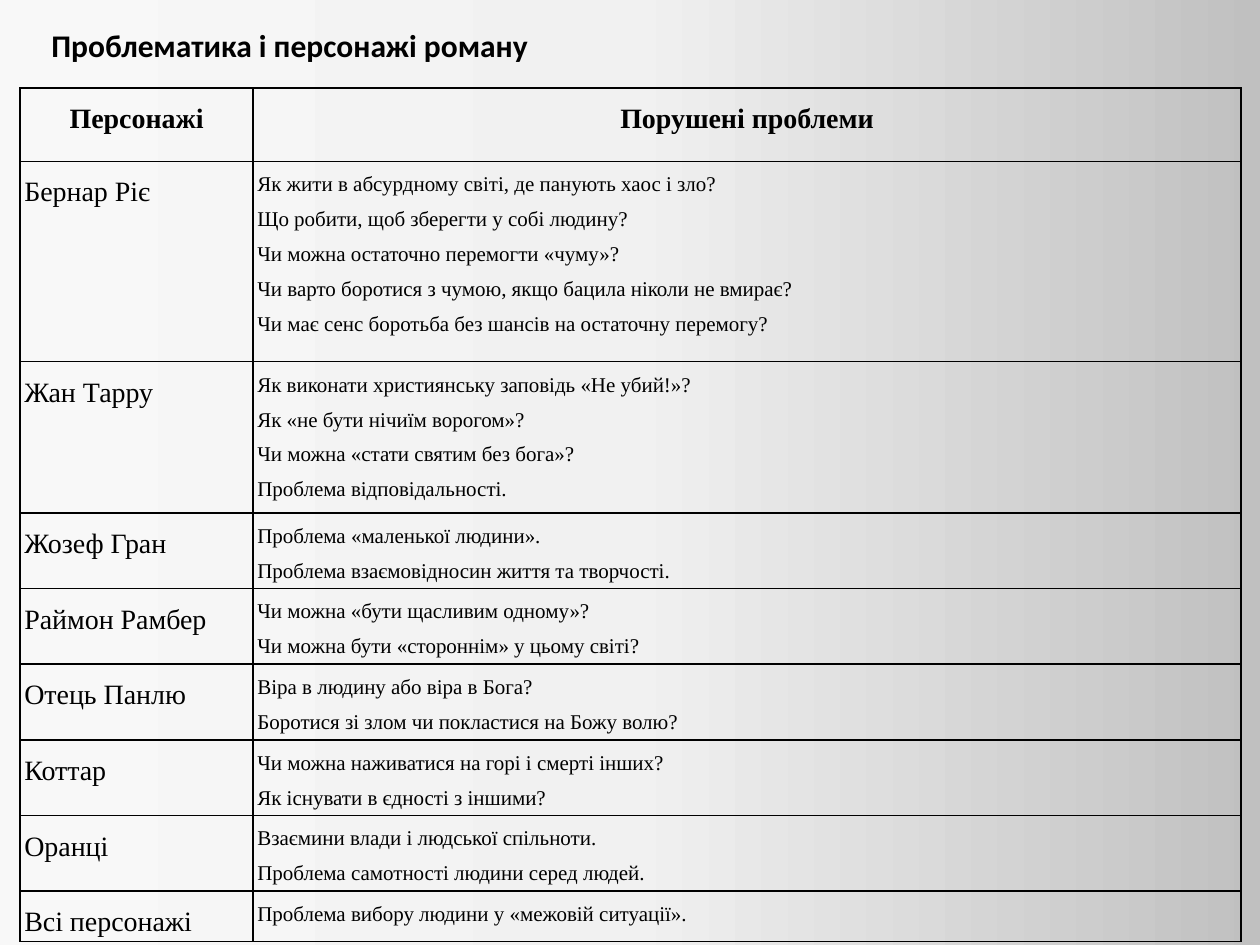
from copy import deepcopy

from lxml.etree import SubElement
from pptx import Presentation
from pptx.dml.color import RGBColor
from pptx.enum.text import MSO_AUTO_SIZE as AutoSize, PP_ALIGN as Align
from pptx.oxml.ns import qn
from pptx.util import Pt

COLORS = {
    "text": "000000",
    "border": "000000",
    "dark": "C0C0C0",
    "middle": "F1F1F1",
    "light": "F8F8F8",
}
TITLE = {"name": "Calibri", "size": Pt(18), "bold": True}
HEADER = {"name": "Times New Roman", "size": Pt(16), "bold": True}
NAME = {"name": "Times New Roman", "size": Pt(16), "bold": False}
PROBLEM = {"name": "Times New Roman", "size": Pt(12), "bold": False}
CELL_MARGINS = {"margin_left": Pt(2.4), "margin_right": Pt(2.4),
                "margin_top": 0, "margin_bottom": 0}

COLUMN_WIDTHS = (133.2, 564.5)
HEADINGS = ("Персонажі", "Порушені проблеми")
HEADING_HEIGHT = 41.8

# Row height, character, problems raised
CHARACTERS = (
    (114.5, "Бернар Ріє", (
        "Як жити в абсурдному світі, де панують хаос і зло?",
        "Що робити, щоб зберегти у собі людину?",
        "Чи можна остаточно перемогти «чуму»?",
        "Чи варто боротися з чумою, якщо бацила ніколи не вмирає?",
        "Чи має сенс боротьба без шансів на остаточну перемогу?")),
    (56.9, "Жан Тарру", (
        "Як виконати християнську заповідь «Не убий!»?",
        "Як «не бути нічиїм ворогом»?",
        "Чи можна «стати святим без бога»?",
        "Проблема відповідальності.")),
    (34.6, "Жозеф Гран", (
        "Проблема «маленької людини».",
        "Проблема взаємовідносин життя та творчості.")),
    (34.6, "Раймон Рамбер", (
        "Чи можна «бути щасливим одному»?",
        "Чи можна бути «стороннім» у цьому світі?")),
    (34.6, "Отець Панлю", (
        "Віра в людину або віра в Бога?",
        "Боротися зі злом чи покластися на Божу волю?")),
    (34.6, "Коттар", (
        "Чи можна наживатися на горі і смерті інших?",
        "Як існувати в єдності з іншими?")),
    (34.6, "Оранці", (
        "Взаємини влади і людської спільноти.",
        "Проблема самотності людини серед людей.")),
    (23, "Всі персонажі", ("Проблема вибору людини у «межовій ситуації».",)),
)


def set_attributes(target, values):
    for name, value in values.items():
        setattr(target, name, value)


def paint_background(slide):
    fill = slide.background.fill
    fill.gradient()
    fill.gradient_angle = 180
    stop_list = slide.element.find(".//" + qn("a:gsLst"))
    stop_list.insert(1, deepcopy(stop_list[0]))
    for stop, position, color in zip(fill.gradient_stops, (0, 0.5, 1),
                                     ("dark", "middle", "light")):
        stop.position = position
        stop.color.rgb = RGBColor.from_string(COLORS[color])


def write_lines(frame, lines, font, align=Align.LEFT, spacing=None):
    for index, line in enumerate(lines):
        paragraph = frame.add_paragraph() if index else frame.paragraphs[0]
        set_attributes(paragraph, {"alignment": align, "line_spacing": spacing})
        run = paragraph.add_run()
        run.text = line
        set_attributes(run.font, font)
        run.font.color.rgb = RGBColor.from_string(COLORS["text"])


def add_title(slide, text):
    box = slide.shapes.add_textbox(Pt(22.3), Pt(11.5), Pt(289.4), Pt(28.8))
    set_attributes(box.text_frame, {"word_wrap": False,
                                    "auto_size": AutoSize.SHAPE_TO_FIT_TEXT})
    write_lines(box.text_frame, [text], TITLE)


def add_borders(cell):
    properties = cell._tc.get_or_add_tcPr()
    for index, side in enumerate(("lnL", "lnR", "lnT", "lnB")):
        line = properties.makeelement(qn("a:" + side), {"w": str(Pt(1))})
        properties.insert(index, line)
        solid = SubElement(line, qn("a:solidFill"))
        SubElement(solid, qn("a:srgbClr"), val=COLORS["border"])


def fill_cell(cell, lines, font, align=Align.LEFT):
    set_attributes(cell, CELL_MARGINS)
    cell.fill.background()
    add_borders(cell)
    write_lines(cell.text_frame, lines, font, align, spacing=1.5)


def add_character_table(slide):
    height = Pt(470.2)
    frame = slide.shapes.add_table(len(CHARACTERS) + 1, len(HEADINGS), Pt(11.5),
                                   Pt(50.4), Pt(sum(COLUMN_WIDTHS)), height)
    table = frame.table
    set_attributes(table, {"first_row": False, "horz_banding": False})
    for column, width in zip(table.columns, COLUMN_WIDTHS):
        column.width = Pt(width)

    # Heading row
    table.rows[0].height = Pt(HEADING_HEIGHT)
    for cell, heading in zip(table.rows[0].cells, HEADINGS):
        fill_cell(cell, [heading], HEADER, Align.CENTER)

    # One row per character
    for index, (row_height, name, problems) in enumerate(CHARACTERS, start=1):
        table.rows[index].height = Pt(row_height)
        fill_cell(table.cell(index, 0), [name], NAME)
        fill_cell(table.cell(index, 1), problems, PROBLEM)
    frame.height = height


def main():
    presentation = Presentation()
    set_attributes(presentation, {"slide_width": Pt(720), "slide_height": Pt(540)})
    slide = presentation.slides.add_slide(presentation.slide_layouts[6])
    paint_background(slide)
    add_title(slide, "Проблематика і персонажі роману")
    add_character_table(slide)
    presentation.save("out.pptx")


if __name__ == "__main__":
    main()
